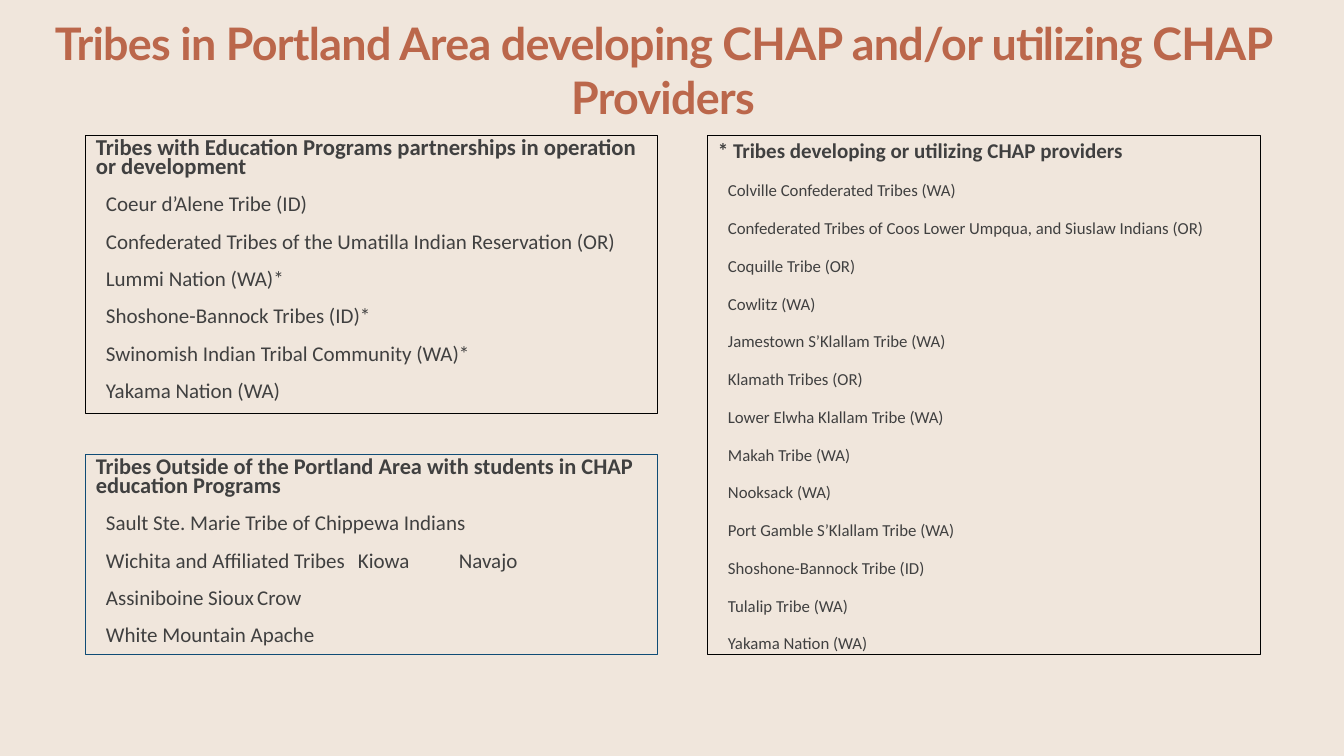
from lxml.etree import SubElement
from pptx import Presentation
from pptx.dml.color import RGBColor
from pptx.enum.text import MSO_ANCHOR as Anchor, MSO_AUTO_SIZE as AutoSize, PP_ALIGN as Align
from pptx.oxml.ns import qn
from pptx.util import Inches, Pt

SAND = RGBColor(0xF0, 0xE6, 0xDC)
CLAY = RGBColor(0xBB, 0x67, 0x4B)
CHARCOAL = RGBColor(0x40, 0x40, 0x40)
BLACK = RGBColor(0x00, 0x00, 0x00)
NAVY = RGBColor(0x0F, 0x4C, 0x76)

LEFT, RIGHT = (6.38, 42.54), (52.66, 41.11)
TOP = 17.87

PARTNERS = [
    "Coeur d’Alene Tribe (ID)",
    "Confederated Tribes of the Umatilla Indian Reservation (OR)",
    "Lummi Nation (WA)*",
    "Shoshone-Bannock Tribes (ID)*",
    "Swinomish Indian Tribal Community (WA)*",
    "Yakama Nation (WA)",
]
PROVIDERS = [
    "Colville Confederated Tribes (WA)",
    "Confederated Tribes of Coos Lower Umpqua, and Siuslaw Indians (OR)",
    "Coquille Tribe (OR)",
    "Cowlitz (WA)",
    "Jamestown S’Klallam Tribe (WA)",
    "Klamath Tribes (OR)",
    "Lower Elwha Klallam Tribe (WA)",
    "Makah Tribe (WA)",
    "Nooksack (WA)",
    "Port Gamble S’Klallam Tribe (WA)",
    "Shoshone-Bannock Tribe (ID)",
    "Tulalip Tribe (WA)",
    "Yakama Nation (WA)",
]
OUTSIDE = [
    "Sault Ste. Marie Tribe of Chippewa Indians",
    ("Wichita and Affiliated Tribes\tKiowa\tNavajo", (2.6, 3.3)),
    ("Assiniboine Sioux\tCrow", (1.89,)),
    "White Mountain Apache",
]


class TribesPage:
    """Hold the style and the current slide, placed on a grid of 100 columns by 100 rows."""

    def __init__(self, deck):
        self.column = deck.slide_width / 100
        self.row = deck.slide_height / 100
        self.page = deck.slides.add_slide(deck.slide_layouts[4])
        self.slots = {slot.placeholder_format.idx: slot for slot in self.page.placeholders}
        fill = self.page.background.fill
        fill.solid()
        fill.fore_color.rgb = SAND

    def place(self, idx, left, top, width, height):
        box = self.slots.pop(idx)
        box.left, box.width = round(left * self.column), round(width * self.column)
        box.top, box.height = round(top * self.row), round(height * self.row)
        frame = box.text_frame
        frame.word_wrap = True
        frame.auto_size = AutoSize.NONE
        frame.vertical_anchor = Anchor.TOP
        return box

    def add_span(self, para, text, size, color, bold, face="Calibri"):
        span = para.add_run()
        span.text = text
        font = span.font
        font.name, font.size, font.bold = face, Pt(size), bold
        font.color.rgb = color
        return span

    def title(self, text):
        frame = self.place(0, 1.13, 1.33, 96.4, 23.73).text_frame
        frame.margin_left = frame.margin_right = frame.margin_bottom = 0
        frame.margin_top = Inches(0.06)
        para = frame.paragraphs[0]
        para.alignment = Align.CENTER
        span = self.add_span(para, text, 32, CLAY, True, "Lato")
        span._r.get_or_add_rPr().set("spc", "-50")

    def panel(self, idx, area, border, spacing, heading, tribes, sizes):
        box = self.place(idx, *area)
        box.line.color.rgb = border
        box.line.width = Pt(0.75)
        frame = box.text_frame
        for number, entry in enumerate([heading, *tribes]):
            text, stops = (entry, ()) if isinstance(entry, str) else entry
            para = frame.add_paragraph() if number else frame.paragraphs[0]
            self.indent(para, Inches(0.1) if number else 0, stops)
            para.line_spacing = spacing
            para.space_before = Pt(12 if number else 0)
            para.space_after = Pt(2)
            self.add_span(para, text, sizes[min(number, 1)], CHARCOAL, not number)

    def indent(self, para, margin, stops):
        props = para._p.get_or_add_pPr()
        props.set("marL", str(margin))
        props.set("indent", "0")
        SubElement(props, qn("a:buNone"))
        if stops:
            tabs = SubElement(props, qn("a:tabLst"))
            for stop in stops:
                SubElement(tabs, qn("a:tab"), pos=str(Inches(stop)), algn="l")

    def clear_empty(self):
        for slot in self.slots.values():
            slot.element.getparent().remove(slot.element)


def main():
    deck = Presentation()
    deck.slide_width, deck.slide_height = Inches(13.33), Inches(7.5)
    page = TribesPage(deck)
    page.title("Tribes in Portland Area developing CHAP and/or utilizing CHAP Providers")
    page.panel(1, (LEFT[0], TOP, LEFT[1], 36.8), BLACK, 0.7,
               "Tribes with Education Programs partnerships in operation or development",
               PARTNERS, (16.2, 15))
    page.panel(2, (RIGHT[0], TOP, RIGHT[1], 68.67), BLACK, 0.9,
               "* Tribes developing or utilizing CHAP providers", PROVIDERS, (15, 12))
    page.panel(4, (LEFT[0], 60.13, LEFT[1], 26.4), NAVY, 0.7,
               "Tribes Outside of the Portland Area with students in CHAP education Programs",
               OUTSIDE, (16, 15))
    page.clear_empty()
    deck.save("out.pptx")


if __name__ == "__main__":
    main()
